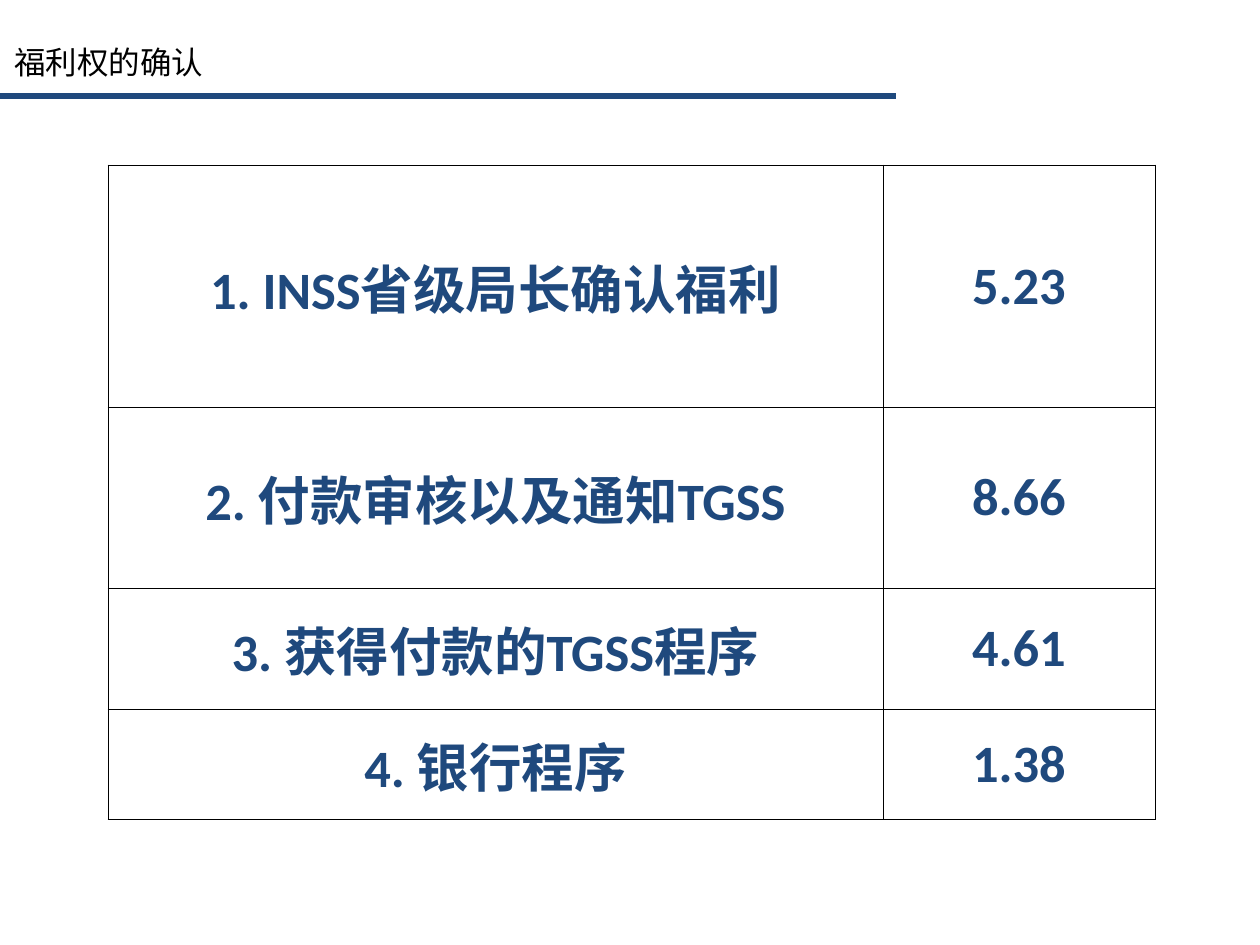
"""Build a slide with a table of benefit recognition steps and their values."""
from typing import NamedTuple

from lxml.etree import SubElement
from pptx import Presentation
from pptx.dml.color import RGBColor
from pptx.enum.shapes import MSO_CONNECTOR
from pptx.enum.text import MSO_ANCHOR, PP_ALIGN
from pptx.oxml.ns import qn
from pptx.util import Pt

SCALE = 914400 // 126
NAVY = "1F497D"
BLACK = "000000"


class Step(NamedTuple):
    """A table row: its label, value and height in px."""
    label: str
    value: str
    height: int


STEPS = [
    Step("1. INSS省级局长确认福利", "5.23", 242),
    Step("2. 付款审核以及通知TGSS", "8.66", 181),
    Step("3. 获得付款的TGSS程序", "4.61", 121),
    Step("4. 银行程序", "1.38", 111),
]
WIDTHS = [775, 272]


def px(count: int) -> int:
    """Turn px into EMU."""
    return count * SCALE


def color(code: str) -> RGBColor:
    """Turn a hex string into a colour."""
    return RGBColor.from_string(code)


def write(frame, text: str, *, size: int, ink: str, bold: bool = False,
          align=PP_ALIGN.LEFT) -> None:
    """Write one formatted paragraph into a text frame."""
    para = frame.paragraphs[0]
    para.alignment = align
    run = para.add_run()
    run.text = text
    font = run.font
    font.name, font.size, font.bold = "Calibri", Pt(size), bold
    font.color.rgb = color(ink)


def border(cell, ink: str, width: float) -> None:
    """Give a cell a solid border on all four sides."""
    props = cell._tc.get_or_add_tcPr()
    for side in "LRTB":
        line = SubElement(props, qn(f"a:ln{side}"), w=str(Pt(width)))
        fill = SubElement(line, qn("a:solidFill"))
        SubElement(fill, qn("a:srgbClr"), val=ink)


def fill_cell(cell, text: str) -> None:
    """Format a cell and write its text."""
    cell.margin_left = cell.margin_right = cell.margin_top = px(1)
    cell.margin_bottom = 0
    cell.vertical_anchor = MSO_ANCHOR.MIDDLE
    border(cell, BLACK, 0.5)
    cell.fill.background()
    write(cell.text_frame, text, size=30, ink=NAVY, bold=True,
          align=PP_ALIGN.CENTER)


def add_rule(slide) -> None:
    """Draw the line under the title."""
    rule = slide.shapes.add_connector(
        MSO_CONNECTOR.STRAIGHT, 0, px(96), px(896), px(96))
    rule.line.color.rgb = color(NAVY)
    rule.line.width = Pt(3)
    SubElement(rule._element.spPr, qn("a:effectLst"))


def add_steps(slide) -> None:
    """Draw the table of steps."""
    height = sum(step.height for step in STEPS)
    table = slide.shapes.add_table(
        len(STEPS), len(WIDTHS), px(108), px(165),
        px(sum(WIDTHS)), px(height)).table
    table.first_row = table.horz_banding = False
    for col, width in zip(table.columns, WIDTHS):
        col.width = px(width)
    for row, step in zip(table.rows, STEPS):
        row.height = px(step.height)
        for cell, text in zip(row.cells, (step.label, step.value)):
            fill_cell(cell, text)


def add_title(slide) -> None:
    """Write the title above the line."""
    box = slide.shapes.add_textbox(px(2), px(-2), px(968), px(89))
    frame = box.text_frame
    frame.word_wrap = True
    frame.vertical_anchor = MSO_ANCHOR.BOTTOM
    write(frame, "福利权的确认", size=18, ink=BLACK)


def main() -> None:
    """Build and save the slide."""
    deck = Presentation()
    deck.slide_width, deck.slide_height = px(1260), px(945)
    slide = deck.slides.add_slide(deck.slide_layouts[6])
    add_rule(slide)
    add_steps(slide)
    add_title(slide)
    deck.save("out.pptx")


if __name__ == "__main__":
    main()
